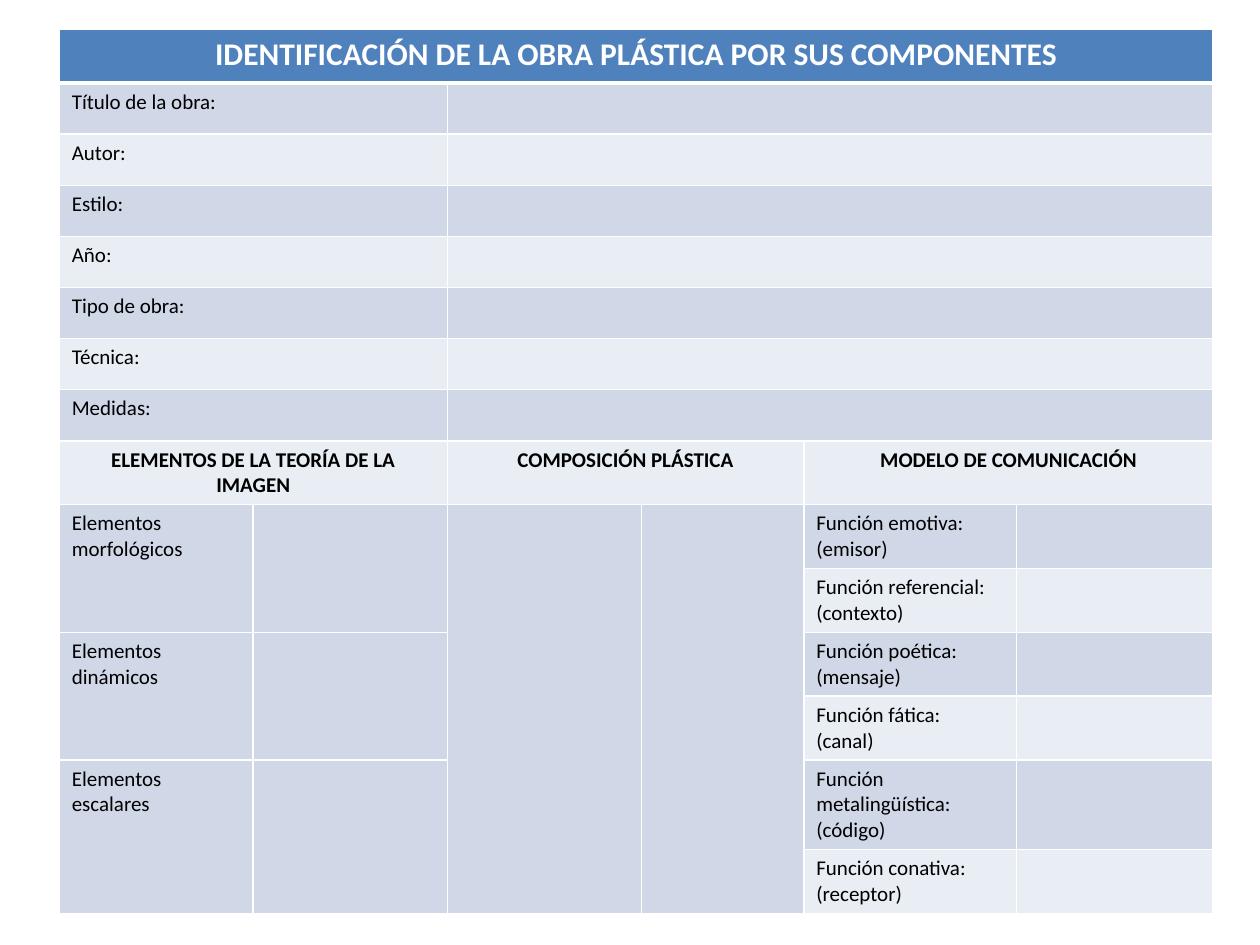
from dataclasses import dataclass

from lxml.etree import SubElement
from pptx import Presentation
from pptx.dml.color import RGBColor as RGB
from pptx.enum.text import PP_ALIGN as Align
from pptx.oxml.ns import qn
from pptx.util import Inches, Pt


@dataclass(frozen=True)
class Theme:
    """Colours, font and sizes of the sheet."""
    font: str = "Calibri"
    head: str = "4F81BD"
    dark: str = "D0D8E8"
    light: str = "E9EDF4"
    white: str = "FFFFFF"
    ink: str = "000000"
    big: int = 18
    small: int = 12
    thin: int = 1
    thick: int = 3


THEME = Theme()
TITLE = "IDENTIFICACIÓN DE LA OBRA PLÁSTICA POR SUS COMPONENTES"
FIELDS = ["Título de la obra:", "Autor:", "Estilo:", "Año:",
          "Tipo de obra:", "Técnica:", "Medidas:"]
HEADS = ["ELEMENTOS DE LA TEORÍA DE LA IMAGEN", "COMPOSICIÓN PLÁSTICA",
         "MODELO DE COMUNICACIÓN"]
PARTS = ["Elementos morfológicos", "Elementos dinámicos", "Elementos escalares"]
ROLES = ["Función emotiva:\n(emisor)", "Función referencial:\n(contexto)",
         "Función poética:\n(mensaje)", "Función fática:\n(canal)",
         "Función metalingüística:\n(código)", "Función conativa:\n(receptor)"]
COLS = [1.54, 1.54, 1.54, 1.29, 1.69, 1.56]
FIELD_ROW = Inches(2.83) // len(FIELDS)
ROWS = [Inches(0.43)] + [FIELD_ROW] * len(FIELDS) + [
    Inches(h) for h in (0.5, 0.5, 0.5, 0.5, 0.5, 0.7, 0.5)]
HEAD_ROW = 1 + len(FIELDS)
BODY_ROW = HEAD_ROW + 1


def rule(cell, side, width):
    """Draw one white border of a cell."""
    line = SubElement(cell._tc.get_or_add_tcPr(), qn(f"a:ln{side}"), w=str(Pt(width)))
    fill = SubElement(line, qn("a:solidFill"))
    SubElement(fill, qn("a:srgbClr"), val=THEME.white)


def paint(cell, row):
    """Give a cell its borders and the band colour of its row."""
    wide = {"T": row == 1, "B": row == 0}
    for side in "LRTB":
        rule(cell, side, THEME.thick if wide.get(side) else THEME.thin)
    tone = THEME.dark if row % 2 else THEME.light
    cell.fill.solid()
    cell.fill.fore_color.rgb = RGB.from_string(tone if row else THEME.head)


def write(cell, text, size=THEME.small, ink=THEME.ink, bold=False):
    """Fill a cell with text; bold text is centred."""
    cell.text = text
    for para in cell.text_frame.paragraphs:
        para.alignment = Align.CENTER if bold else Align.LEFT
        font = para.font
        font.name, font.size, font.bold = THEME.font, Pt(size), bold
        font.color.rgb = RGB.from_string(ink)


def span(table, row, col, high, wide):
    """Merge a block of cells and return its first one."""
    cell = table.cell(row, col)
    cell.merge(table.cell(row + high - 1, col + wide - 1))
    return cell


def add_grid(slide, left, top):
    """Place the empty banded table and return it."""
    table = slide.shapes.add_table(
        len(ROWS), len(COLS), left, top, Inches(sum(COLS)), sum(ROWS)).table
    for col, width in zip(table.columns, COLS):
        col.width = Inches(width)
    for num, (row, height) in enumerate(zip(table.rows, ROWS)):
        row.height = height
        for cell in row.cells:
            paint(cell, num)
    return table


def fill_fields(table):
    """Write the title and the fields of the work."""
    write(span(table, 0, 0, 1, len(COLS)), TITLE, THEME.big, THEME.white, True)
    for row, text in enumerate(FIELDS, 1):
        write(span(table, row, 0, 1, 2), text)
        span(table, row, 2, 1, 4)


def fill_study(table):
    """Write the three columns of the analysis."""
    for num, text in enumerate(HEADS):
        write(span(table, HEAD_ROW, 2 * num, 1, 2), text, bold=True)
    for num, text in enumerate(PARTS):
        row = BODY_ROW + 2 * num
        write(span(table, row, 0, 2, 1), text)
        span(table, row, 1, 2, 1)
    for col in (2, 3):
        span(table, BODY_ROW, col, len(ROLES), 1)
    for row, text in enumerate(ROLES, BODY_ROW):
        write(table.cell(row, 4), text)


def main():
    """Build the slide and save it."""
    deck = Presentation()
    deck.slide_width, deck.slide_height = Inches(10), Inches(7.5)
    slide = deck.slides.add_slide(deck.slide_layouts[6])
    table = add_grid(slide, Inches(0.47), Inches(0.23))
    fill_fields(table)
    fill_study(table)
    deck.save("out.pptx")


if __name__ == "__main__":
    main()
